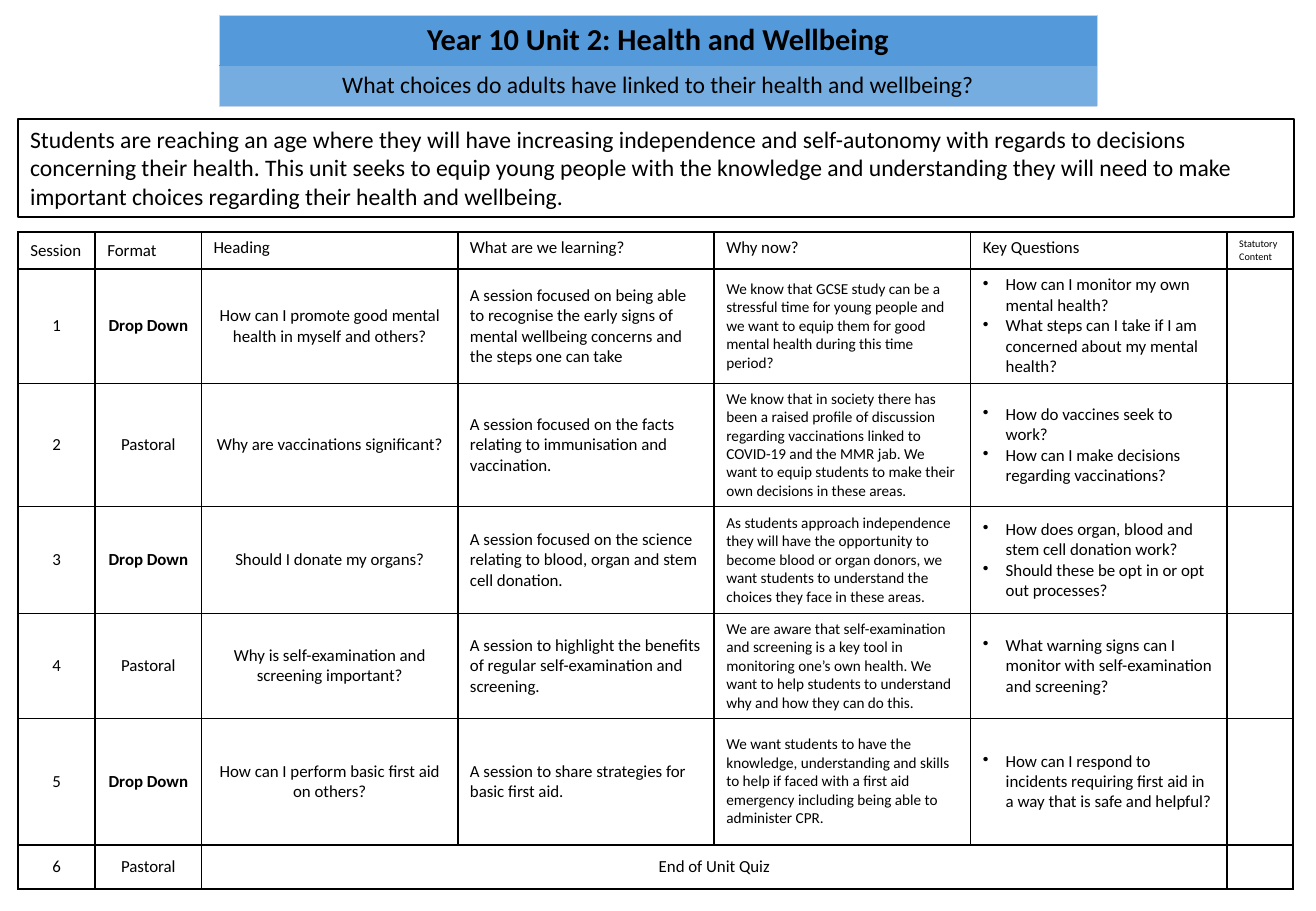
"""Build the Year 10 Health and Wellbeing unit overview slide."""
from lxml.etree import SubElement
from pptx import Presentation
from pptx.dml.color import RGBColor
from pptx.enum.shapes import MSO_SHAPE as SHAPE
from pptx.enum.text import MSO_ANCHOR as ANCHOR, PP_ALIGN as ALIGN
from pptx.oxml.ns import qn
from pptx.util import Cm, Pt

TITLE = "Year 10 Unit 2: Health and Wellbeing"
QUESTION = "What choices do adults have linked to their health and wellbeing?"
INTRO = ("Students are reaching an age where they will have increasing independence and "
         "self-autonomy with regards to decisions concerning their health. This unit seeks to "
         "equip young people with the knowledge and understanding they will need to make "
         "important choices regarding their health and wellbeing.")
HEADINGS = ["Session", "Format", "Heading", "What are we learning?", "Why now?",
            "Key Questions", "Statutory Content"]
SESSIONS = [
    ("1", "Drop Down", "How can I promote good mental health in myself and others?",
     "A session focused on being able to recognise the early signs of mental wellbeing "
     "concerns and the steps one can take",
     "We know that GCSE study can be a stressful time for young people and we want to equip "
     "them for good mental health during this time period?",
     ["How can I monitor my own mental health?",
      "What steps can I take if I am concerned about my mental health?"], ""),
    ("2", "Pastoral", "Why are vaccinations significant?",
     "A session focused on the facts relating to immunisation and vaccination.",
     "We know that in society there has been a raised profile of discussion regarding "
     "vaccinations linked to COVID-19 and the MMR jab. We want to equip students to make "
     "their own decisions in these areas.",
     ["How do vaccines seek to work?",
      "How can I make decisions regarding vaccinations?"], ""),
    ("3", "Drop Down", "Should I donate my organs?",
     "A session focused on the science relating to blood, organ and stem cell donation.",
     "As students approach independence they will have the opportunity to become blood or "
     "organ donors, we want students to understand the choices they face in these areas.",
     ["How does organ, blood and stem cell donation work?",
      "Should these be opt in or opt out processes?"], ""),
    ("4", "Pastoral", "Why is self-examination and screening important?",
     "A session to highlight the benefits of regular self-examination and screening.",
     "We are aware that self-examination and screening is a key tool in monitoring one’s own "
     "health. We want to help students to understand why and how they can do this.",
     ["What warning signs can I monitor with self-examination and screening?"], ""),
    ("5", "Drop Down", "How can I perform basic first aid on others?",
     "A session to share strategies for basic first aid.",
     "We want students to have the knowledge, understanding and skills to help if faced with "
     "a first aid emergency including being able to administer CPR.",
     ["How can I respond to incidents requiring first aid in a way that is safe and helpful?"],
     ""),
    ("6", "Pastoral", "End of Unit Quiz", "", "", "", ""),
]
COL_WIDTHS = [1.61, 2.22] + [5.36] * 4 + [1.38]
ROW_HEIGHTS = [0.76, 2.4, 2.57, 2.24, 2.19, 2.65, 0.92]
BANNER_HEIGHTS = [1.04, 0.83]
LEFT, WIDTH = 0.38, 26.67

BLACK = RGBColor(0x00, 0x00, 0x00)
WHITE = RGBColor(0xFF, 0xFF, 0xFF)
BLUE = RGBColor(0x54, 0x9A, 0xDB)
LIGHT_BLUE = RGBColor(0x76, 0xAD, 0xE1)
PALE_BLUE = RGBColor(0xC4, 0xD5, 0xEB)


def add_grid(s, left, top, widths, heights):
    frame = s.shapes.add_table(len(heights), len(widths), Cm(left), Cm(top),
                               Cm(sum(widths)), Cm(sum(heights)))
    table = frame.table
    table.first_row = table.horz_banding = False
    for col, width in zip(table.columns, widths):
        col.width = Cm(width)
    for row, height in zip(table.rows, heights):
        row.height = Cm(height)
    return table


def set_borders(cell, width, left, right, top, bottom):
    props = cell._tc.get_or_add_tcPr()
    for side, color in zip("LRTB", (left, right, top, bottom)):
        line = SubElement(props, qn(f"a:ln{side}"), w=str(Pt(width)))
        fill = SubElement(line, qn("a:solidFill"))
        SubElement(fill, qn("a:srgbClr"), val=str(color))


def fill_shape(shape, color):
    shape.fill.solid()
    shape.fill.fore_color.rgb = color


def write(tf, text, size, bold=False, align=ALIGN.LEFT):
    bulleted = isinstance(text, list)
    tf.text = "\n".join(text) if bulleted else text
    for p in tf.paragraphs:
        p.alignment = align
        p.font.name, p.font.size, p.font.bold = "Calibri", Pt(size), bold
        p.font.color.rgb = BLACK
        if not text:
            SubElement(p._p, qn("a:endParaRPr"), sz=str(size * 100))
        if bulleted:
            props = p._p.get_or_add_pPr()
            props.set("marL", str(Cm(0.48)))
            props.set("indent", str(-Cm(0.48)))
            bullet = props.makeelement(qn("a:buChar"), {"char": "•"})
            props.insert(0, bullet)


def add_banner(s):
    table = add_grid(s, 4.59, 0.32, [18.34], BANNER_HEIGHTS)
    rows = [(TITLE, 18, True, BLUE, PALE_BLUE, BLUE),
            (QUESTION, 14, False, LIGHT_BLUE, BLUE, PALE_BLUE)]
    for i, (text, size, bold, color, top, bottom) in enumerate(rows):
        cell = table.cell(i, 0)
        set_borders(cell, 0.5, PALE_BLUE, PALE_BLUE, top, bottom)
        fill_shape(cell, color)
        write(cell.text_frame, text, size, bold, ALIGN.CENTER)


def add_intro(s):
    sp = s.shapes.add_shape(SHAPE.RECTANGLE, Cm(LEFT), Cm(2.49), Cm(WIDTH), Cm(2.05))
    sp.shadow.inherit = False
    fill_shape(sp, WHITE)
    sp.line.color.rgb, sp.line.width = BLACK, Pt(1)
    sp.text_frame.word_wrap = True
    sp.text_frame.vertical_anchor = ANCHOR.TOP
    write(sp.text_frame, INTRO, 14)


def add_sessions(s):
    table = add_grid(s, LEFT, 4.85, COL_WIDTHS, ROW_HEIGHTS)
    for i, row in enumerate([HEADINGS] + SESSIONS):
        for j, text in enumerate(row):
            cell = table.cell(i, j)
            set_borders(cell, 1, BLACK, BLACK, BLACK, BLACK)
            fill_shape(cell, WHITE)
            header = i == 0
            cell.vertical_anchor = ANCHOR.TOP if header and j > 1 else ANCHOR.MIDDLE
            size = 6 if header and j == 6 else 9 if not header and j == 4 else 10
            align = ALIGN.CENTER if not header and j < 3 else ALIGN.LEFT
            write(cell.text_frame, text, size, text == "Drop Down", align)
    last = len(SESSIONS)
    table.cell(last, 2).merge(table.cell(last, 5))


def main():
    prs = Presentation()
    prs.slide_width, prs.slide_height = Cm(27.51), Cm(19.05)
    s = prs.slides.add_slide(prs.slide_layouts[6])
    add_banner(s)
    add_sessions(s)
    add_intro(s)
    prs.save("out.pptx")


if __name__ == "__main__":
    main()
